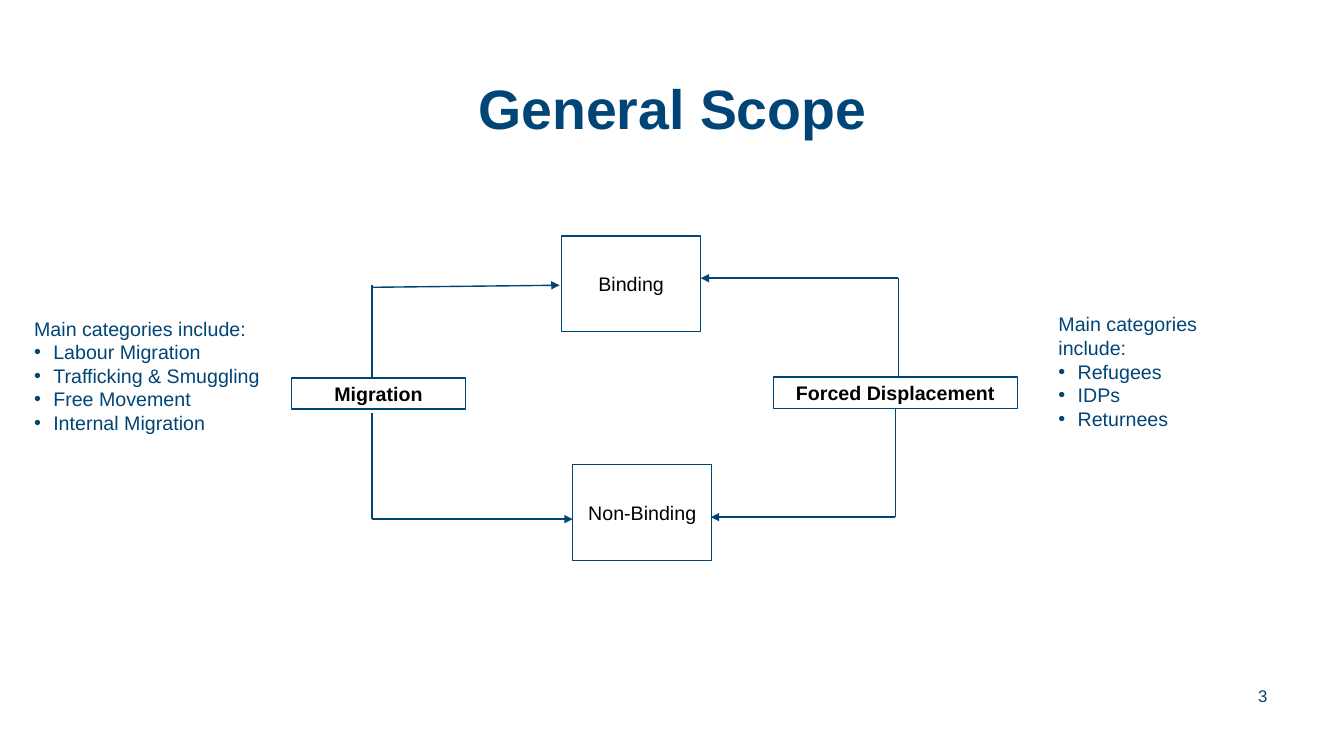
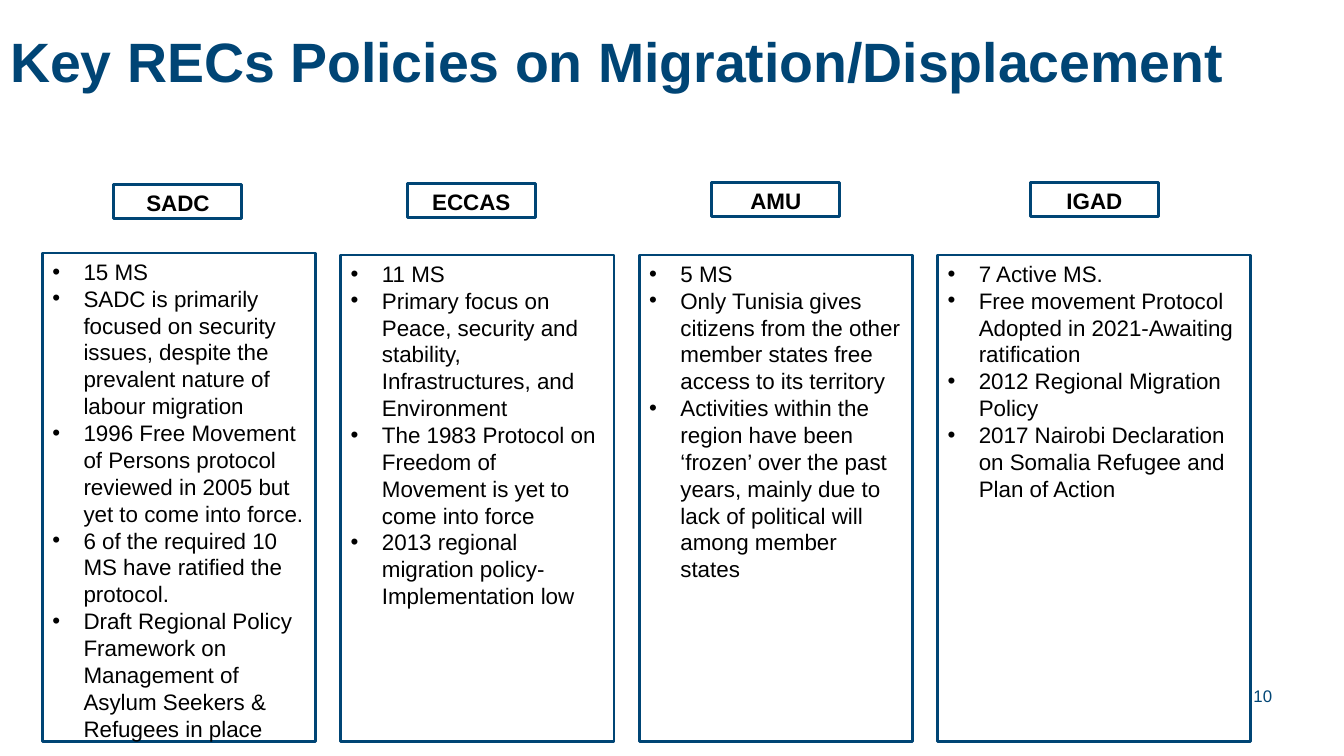
from dataclasses import dataclass

from lxml import etree
from pptx import Presentation
from pptx.dml.color import RGBColor
from pptx.enum.shapes import MSO_CONNECTOR, MSO_SHAPE
from pptx.enum.text import MSO_ANCHOR, MSO_AUTO_SIZE, PP_ALIGN
from pptx.oxml.ns import qn
from pptx.slide import Slide
from pptx.text.text import TextFrame
from pptx.util import Inches, Pt

LEFT, CENTER = PP_ALIGN.LEFT, PP_ALIGN.CENTER
TOP, MIDDLE, BOTTOM = MSO_ANCHOR.TOP, MSO_ANCHOR.MIDDLE, MSO_ANCHOR.BOTTOM
NO_FIT = MSO_AUTO_SIZE.NONE
RECT, STRAIGHT = MSO_SHAPE.RECTANGLE, MSO_CONNECTOR.STRAIGHT

COLORS = {"navy": "004575", "black": "000000", "white": "FFFFFF"}
FONT = "Arial"
TITLE_ONLY = 5


@dataclass
class Area:
    left: float
    top: float
    width: float
    height: float

    def lengths(self) -> list[int]:
        return [Inches(n) for n in (self.left, self.top, self.width, self.height)]


@dataclass
class Style:
    size: float
    color: str = "black"
    bold: bool = False
    align: PP_ALIGN = CENTER
    anchor: MSO_ANCHOR = TOP
    indent: float = 0
    spacing: float = 1


@dataclass
class Box:
    area: Area
    lines: list[str]
    style: Style
    border: float = 0
    heads: int = 0  # leading lines without a bullet


@dataclass
class Wire:
    start: tuple[float, float]
    end: tuple[float, float]
    arrow: bool = False


@dataclass
class Column:
    name: str
    name_left: float
    name_top: float
    top: float
    width: float
    points: list[str]


TITLE = Style(39.6, "navy", bold=True, spacing=0.9)
TITLE_LEFT = Style(39.6, "navy", bold=True, align=LEFT, spacing=0.9)
NUMBER = Style(12, "navy", anchor=BOTTOM)
TOPIC = Style(14, bold=True, anchor=MIDDLE)
KIND = Style(14, anchor=MIDDLE)
SIDE = Style(14, "navy", align=LEFT, indent=0.19)
HEADING = Style(16, bold=True)
POINTS = Style(16, align=LEFT, indent=0.31)

SCOPE = [
    Box(Area(2.89, 3.75, 1.73, 0.31), ["Migration"], TOPIC, 1),
    Box(Area(7.67, 3.74, 2.42, 0.31), ["Forced Displacement"], TOPIC, 1),
    Box(Area(5.57, 2.34, 1.38, 0.95), ["Binding"], KIND, 1),
    Box(Area(5.68, 4.61, 1.38, 0.95), ["Non-Binding"], KIND, 1),
]
WIRES = [
    Wire((3.7, 2.85), (5.55, 2.83), True),
    Wire((8.91, 2.76), (6.95, 2.76), True),
    Wire((8.88, 5.13), (7.05, 5.13), True),
    Wire((3.69, 5.15), (5.68, 5.15), True),
    Wire((3.69, 2.83), (3.69, 3.74)),
    Wire((8.91, 2.76), (8.91, 3.75)),
    Wire((8.88, 4.05), (8.88, 5.13)),
    Wire((3.69, 4.1), (3.69, 5.15)),
]
INTRO = "Main categories include:"
SIDES = [
    Box(Area(0.24, 3.09, 2.62, 1.93),
        [INTRO, "Labour Migration", "Trafficking & Smuggling", "Free Movement",
         "Internal Migration"], SIDE, heads=1),
    Box(Area(10.4, 3.05, 1.87, 1.93),
        [INTRO, "Refugees", "IDPs", "Returnees"], SIDE, heads=1),
]

COL_LEFT, COL_STEP, COL_END = 0.42, 2.96, 7.36
COLUMNS = [
    Column("SADC", 1.13, 1.83, 2.51, 2.71, [
        "15 MS",
        "SADC is primarily focused on security issues, despite the prevalent "
        "nature of labour migration",
        "1996 Free Movement of Persons protocol reviewed in 2005 but yet to "
        "come into force.",
        "6 of the required 10 MS have ratified the protocol.",
        "Draft Regional Policy Framework on Management of Asylum Seekers & "
        "Refugees in place",
    ]),
    Column("ECCAS", 4.04, 1.82, 2.53, 2.71, [
        "11 MS",
        "Primary focus on Peace, security and stability, Infrastructures, and "
        "Environment",
        "The 1983 Protocol on Freedom of Movement is yet to come into force",
        "2013 regional migration policy-Implementation low",
    ]),
    Column("AMU", 7.06, 1.81, 2.53, 2.71, [
        "5 MS",
        "Only Tunisia gives citizens from the other member states free access "
        "to its territory",
        "Activities within the region have been ‘frozen’ over the past years, "
        "mainly due to lack of political will among member states",
    ]),
    Column("IGAD", 10.22, 1.81, 2.53, 3.1, [
        "7 Active MS.",
        "Free movement Protocol Adopted in 2021-Awaiting ratification",
        "2012 Regional Migration Policy",
        "2017 Nairobi Declaration on Somalia Refugee and Plan of Action",
    ]),
]


def paint(name: str) -> RGBColor:
    return RGBColor.from_string(COLORS[name])


def write(frame: TextFrame, lines: list[str], style: Style, heads: int = 0) -> None:
    """Fill a frame; lines after the heads get bullets if the style indents."""
    frame.word_wrap = True
    frame.auto_size = NO_FIT
    frame.vertical_anchor = style.anchor
    for i, line in enumerate(lines):
        para = frame.add_paragraph() if i else frame.paragraphs[0]
        para.alignment = style.align
        para.line_spacing = style.spacing
        if style.indent and i >= heads:
            props = para._p.get_or_add_pPr()
            props.set("marL", str(Inches(style.indent)))
            props.set("indent", str(-Inches(style.indent)))
            face = etree.SubElement(props, qn("a:buFont"))
            face.set("typeface", FONT)
            etree.SubElement(props, qn("a:buChar")).set("char", "•")
        run = para.add_run()
        run.text = line
        font = run.font
        font.name, font.size, font.bold = FONT, Pt(style.size), style.bold
        font.color.rgb = paint(style.color)


def start(deck: Presentation, title: str, area: Area, style: Style, number: str) -> Slide:
    """Add a slide with its title and page number."""
    slide = deck.slides.add_slide(deck.slide_layouts[TITLE_ONLY])
    head = slide.shapes.title
    head.left, head.top, head.width, head.height = area.lengths()
    write(head.text_frame, [title], style)
    page = slide.shapes.add_textbox(*Area(12.28, 6.65, 0.49, 0.4).lengths())
    write(page.text_frame, [number], NUMBER)
    return slide


def draw_box(slide: Slide, box: Box) -> None:
    shape = slide.shapes.add_shape(RECT, *box.area.lengths())
    shape.shadow.inherit = False
    shape.fill.solid()
    shape.fill.fore_color.rgb = paint("white")
    if box.border:
        shape.line.color.rgb = paint("navy")
        shape.line.width = Pt(box.border)
    else:
        shape.line.fill.background()
    write(shape.text_frame, box.lines, box.style, box.heads)


def draw_wire(slide: Slide, wire: Wire) -> None:
    ends = [Inches(n) for n in wire.start + wire.end]
    link = slide.shapes.add_connector(STRAIGHT, *ends)
    link.line.color.rgb = paint("navy")
    link.line.width = Pt(1)
    props = link._element.spPr
    if wire.arrow:
        tail = etree.SubElement(props.find(qn("a:ln")), qn("a:tailEnd"))
        tail.set("type", "triangle")
    etree.SubElement(props, qn("a:effectLst"))


def add_scope(deck: Presentation) -> None:
    slide = start(deck, "General Scope", Area(0.82, 0.76, 11.7, 0.6), TITLE, "3")
    for box in SCOPE:
        draw_box(slide, box)
    for wire in WIRES:
        draw_wire(slide, wire)
    for box in SIDES:
        draw_box(slide, box)


def add_policies(deck: Presentation) -> None:
    slide = start(deck, "Key RECs Policies on Migration/Displacement",
                  Area(0, 0.29, 12.44, 0.61), TITLE_LEFT, "10")
    for i, col in enumerate(COLUMNS):
        body = Area(COL_LEFT + i * COL_STEP, col.top, col.width, COL_END - col.top)
        draw_box(slide, Box(body, col.points, POINTS, 2))
        label = Area(col.name_left, col.name_top, 1.27, 0.34)
        draw_box(slide, Box(label, [col.name], HEADING, 2))


def main() -> None:
    deck = Presentation()
    deck.slide_width, deck.slide_height = Inches(13.33), Inches(7.5)
    add_scope(deck)
    add_policies(deck)
    deck.save("out.pptx")


if __name__ == "__main__":
    main()
